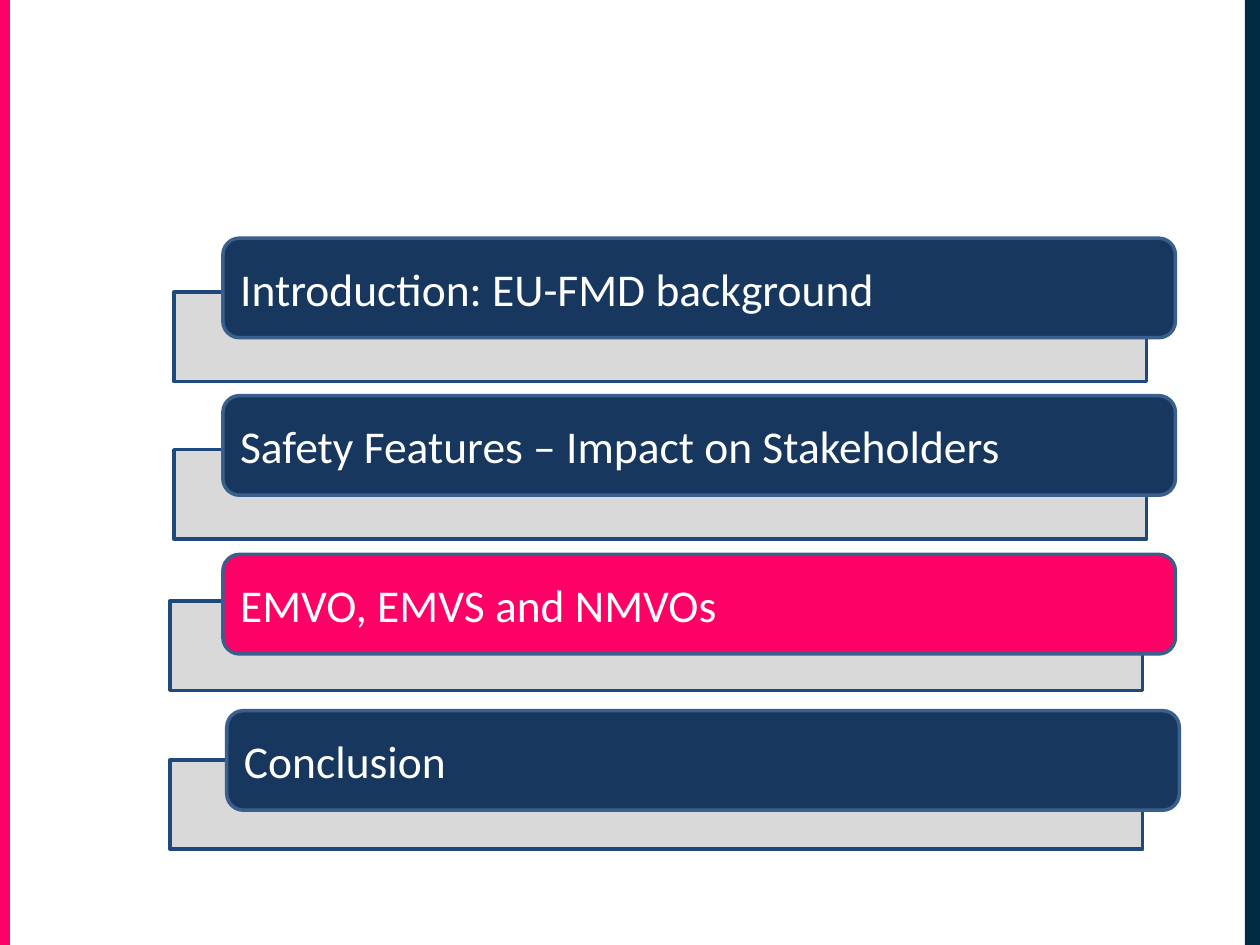
import pptx
import pptx.util
import pptx.dml.color
import pptx.enum.shapes
import pptx.enum.text

Pt = pptx.util.Pt
SHAPES = pptx.enum.shapes.MSO_SHAPE

COLORS = {
    "pink": "FF0066",
    "edge": "002B43",
    "panel": "D9D9D9",
    "panel_line": "1F497D",
    "navy": "17375E",
    "bar_line": "3A5F8C",
    "white": "FFFFFF",
}
SIDE_STRIPS = [
    ((0, -0.7, 5.7, 541.4), "pink"),
    ((711.4, 0, 8.6, 541.4), "edge"),
]
AGENDA = [
    {"text": "Introduction: EU-FMD background", "fill": "navy", "bar": (127.4, 136.1), "panel": (99.4, 167)},
    {"text": "Safety Features – Impact on Stakeholders", "fill": "navy", "bar": (127.4, 226.1), "panel": (99.4, 257)},
    {"text": "EMVO, EMVS and NMVOs", "fill": "pink", "bar": (127.4, 316.8), "panel": (97.2, 343.4)},
    {"text": "Conclusion", "fill": "navy", "bar": (129.6, 406.1), "panel": (97.2, 434.2)},
]
BAR_SIZE = (544.3, 56.9)
PANEL_SIZE = (555.8, 51.1)
FONT = {"name": "Calibri", "size": Pt(26)}
FRAME = {"word_wrap": True, "vertical_anchor": pptx.enum.text.MSO_ANCHOR.MIDDLE}


def color(name):
    return pptx.dml.color.RGBColor.from_string(COLORS[name])


def set_all(target, values):
    for name, value in values.items():
        setattr(target, name, value)


def add_box(page, kind, place, fill, line=None):
    box = page.shapes.add_shape(kind, *(Pt(length) for length in place))
    box.shadow.inherit = False
    box.fill.solid()
    box.fill.fore_color.rgb = color(fill)
    if line:
        box.line.color.rgb = color(line)
        box.line.width = Pt(2)
    else:
        box.line.fill.background()
    return box


def write_label(box, text):
    set_all(box.text_frame, FRAME)
    para = box.text_frame.paragraphs[0]
    para.alignment = pptx.enum.text.PP_ALIGN.LEFT
    span = para.add_run()
    span.text = text
    set_all(span.font, FONT)
    span.font.color.rgb = color("white")


def main():
    deck = pptx.Presentation()
    set_all(deck, {"slide_width": Pt(720), "slide_height": Pt(540)})
    page = deck.slides.add_slide(deck.slide_layouts[6])
    for place, fill in SIDE_STRIPS:
        add_box(page, SHAPES.RECTANGLE, place, fill)
    for item in AGENDA:
        add_box(page, SHAPES.RECTANGLE, item["panel"] + PANEL_SIZE, "panel", "panel_line")
        bar = add_box(page, SHAPES.ROUNDED_RECTANGLE, item["bar"] + BAR_SIZE, item["fill"], "bar_line")
        write_label(bar, item["text"])
    deck.save("out.pptx")


if __name__ == "__main__":
    main()
